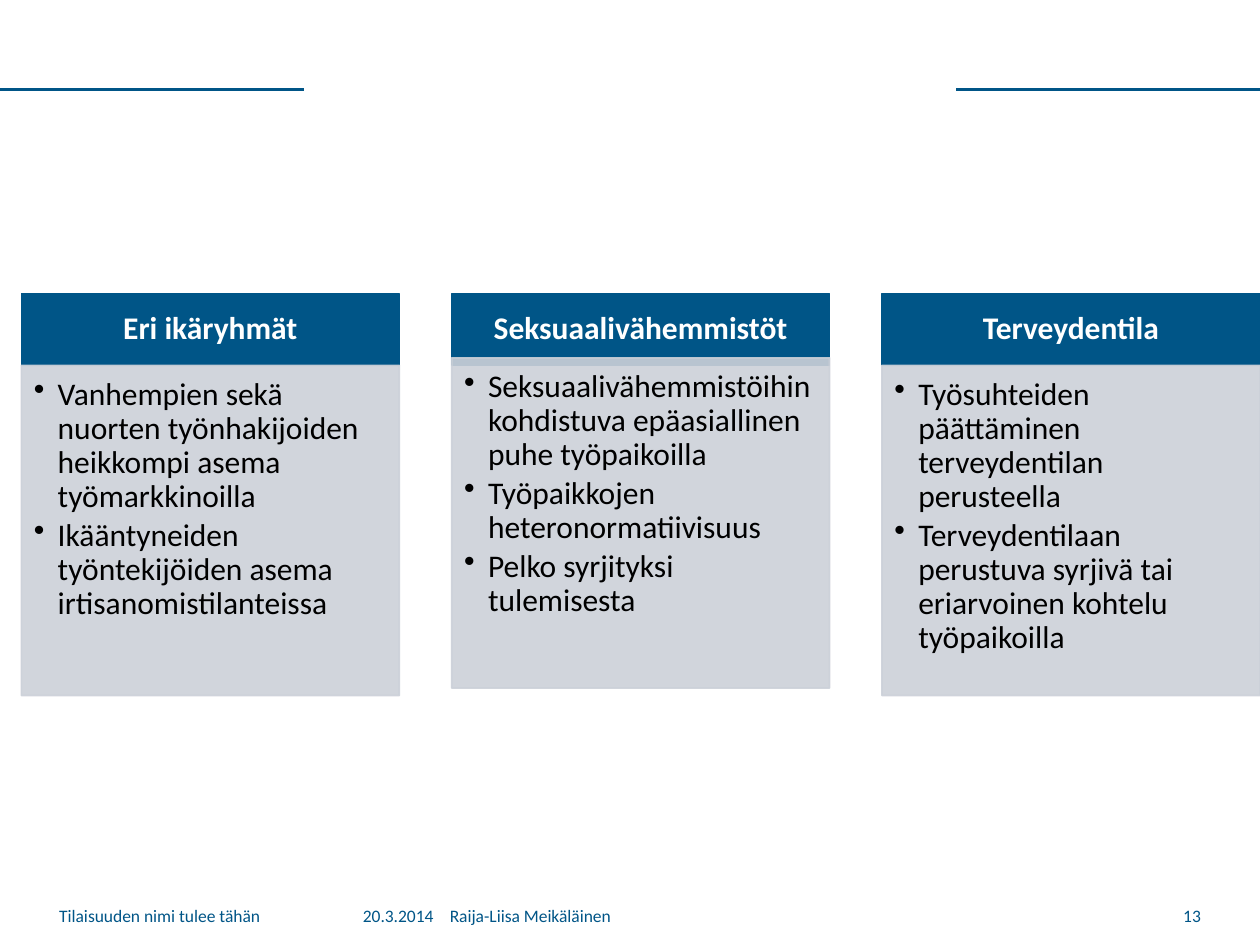
from dataclasses import dataclass

from lxml import etree
from pptx import Presentation
from pptx.dml.color import RGBColor
from pptx.enum import shapes, text
from pptx.oxml import ns
from pptx.util import Inches, Pt


@dataclass(frozen=True)
class Theme:
    font: str = "Calibri"
    blue: RGBColor = RGBColor(0x00, 0x55, 0x87)
    panel: RGBColor = RGBColor(0xCC, 0xD1, 0xD9)
    white: RGBColor = RGBColor(0xFF, 0xFF, 0xFF)
    black: RGBColor = RGBColor(0x00, 0x00, 0x00)
    body_size: int = 18
    footer_size: int = 10


THEME = Theme()
WIDTH, HEIGHT = 10, 7.5
LEFT, TOP = text.PP_ALIGN.LEFT, text.MSO_ANCHOR.TOP
CENTER, MIDDLE = text.PP_ALIGN.CENTER, text.MSO_ANCHOR.MIDDLE
RIGHT = text.PP_ALIGN.RIGHT

# Heading, bullets, and how far the panel overlaps the heading
COLUMNS = [
    ("Eri ikäryhmät", [
        "Vanhempien sekä nuorten työnhakijoiden heikkompi asema työmarkkinoilla",
        "Ikääntyneiden työntekijöiden asema irtisanomistilanteissa"], 0),
    ("Seksuaalivähemmistöt", [
        "Seksuaalivähemmistöihin kohdistuva epäasiallinen puhe työpaikoilla",
        "Työpaikkojen heteronormatiivisuus",
        "Pelko syrjityksi tulemisesta"], 0.06),
    ("Terveydentila", [
        "Työsuhteiden päättäminen terveydentilan perusteella",
        "Terveydentilaan perustuva syrjivä tai eriarvoinen kohtelu työpaikoilla"], 0),
]


def sub(parent, tag, **attrs):
    return etree.SubElement(parent, ns.qn(tag), attrs)


def add_bullet(p, indent):
    pPr = p._p.get_or_add_pPr()
    pPr.set("marL", str(Inches(indent)))
    pPr.set("indent", str(-Inches(indent)))
    sub(pPr, "a:buChar", char="•")


def add_tab(p, position):
    tabs = sub(p._p.get_or_add_pPr(), "a:tabLst")
    sub(tabs, "a:tab", pos=str(Inches(position)), algn="l")


def style(p, size, color, align=LEFT, bold=False):
    p.alignment = align
    p.font.name, p.font.size, p.font.bold = THEME.font, Pt(size), bold
    p.font.color.rgb = color


def frame(sp, anchor, margins):
    tf = sp.text_frame
    tf.word_wrap, tf.vertical_anchor = True, anchor
    (tf.margin_left, tf.margin_top,
     tf.margin_right, tf.margin_bottom) = map(Inches, margins)
    return tf


def add_block(s, box, color, opacity=100):
    sp = s.shapes.add_shape(shapes.MSO_SHAPE.RECTANGLE, *map(Inches, box))
    sp.shadow.inherit = False
    sp.fill.solid()
    sp.fill.fore_color.rgb = sp.line.color.rgb = color
    sp.line.width = Pt(1)
    if opacity < 100:
        for clr in sp._element.spPr.iter(ns.qn("a:srgbClr")):
            sub(clr, "a:alpha", val=str(opacity * 1000))
    return sp


def add_column(s, box, heading, bullets, overlap):
    x, y, w, h = box
    head_h = 0.57

    # Heading bar
    sp = add_block(s, (x, y, w, head_h), THEME.blue)
    p = frame(sp, MIDDLE, (0.14, 0.08, 0.14, 0.08)).paragraphs[0]
    p.text, p.line_spacing = heading, 0.9
    style(p, THEME.body_size, THEME.white, CENTER, True)

    # Bulleted panel
    sp = add_block(s, (x, y + head_h - overlap, w, h - head_h), THEME.panel, 90)
    tf = frame(sp, TOP, (0.1, 0.1, 0.14, 0.16))
    for i, bullet in enumerate(bullets):
        p = tf.add_paragraph() if i else tf.paragraphs[0]
        p.text = bullet
        add_bullet(p, 0.19)
        p.line_spacing, p.space_after = 0.9, Pt(2.7)
        style(p, THEME.body_size, THEME.black)


def add_columns(s, box):
    x, y, w, h = box
    col_w = 3
    step = (w - col_w) / (len(COLUMNS) - 1)
    for i, column in enumerate(COLUMNS):
        add_column(s, (x + i * step, y, col_w, h), *column)


def add_header_rules(s, box):
    x, y, w, length = box
    for start in (x, x + w - length):
        line = s.shapes.add_connector(
            shapes.MSO_CONNECTOR.STRAIGHT,
            *map(Inches, (start, y, start + length, y)))
        line.line.color.rgb, line.line.width = THEME.blue, Pt(1.5)
        sub(line._element.spPr, "a:effectLst")


def add_footer(s, box):
    x, y, w, h = box
    parts = [
        (x, 2.24, "Tilaisuuden nimi tulee tähän", LEFT),
        (x + 2.41, 5.9, "20.3.2014\tRaija-Liisa Meikäläinen", LEFT),
        (x + w - 0.59, 0.59, "13", RIGHT),
    ]
    for left, width, words, align in parts:
        sp = s.shapes.add_textbox(*map(Inches, (left, y, width, h)))
        p = frame(sp, MIDDLE, (0, 0, 0, 0)).paragraphs[0]
        p.text = words
        if "\t" in words:
            add_tab(p, 0.69)
        style(p, THEME.footer_size, THEME.blue, align)


def main():
    prs = Presentation()
    prs.slide_width, prs.slide_height = Inches(WIDTH), Inches(HEIGHT)
    s = prs.slides.add_slide(prs.slide_layouts[6])
    add_header_rules(s, (0, 0.71, WIDTH, 2.41))
    add_columns(s, (0.17, 2.33, WIDTH - 0.17, 3.19))
    add_footer(s, (0.47, 0.95 * HEIGHT, 9.06, 0.28))
    prs.save("out.pptx")


if __name__ == "__main__":
    main()
